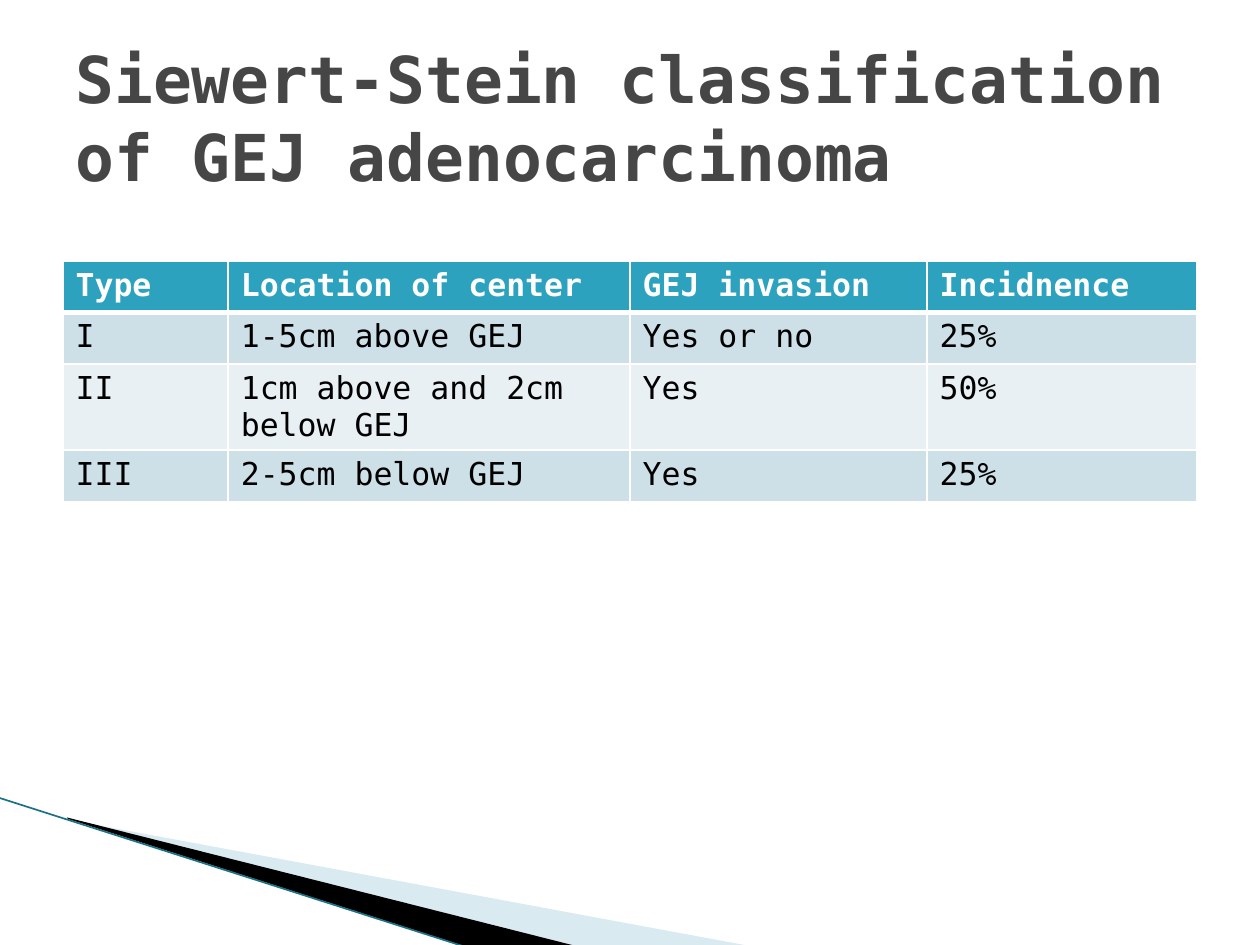
from lxml import etree
from pptx import Presentation
from pptx.dml.color import RGBColor
from pptx.enum.shapes import MSO_CONNECTOR
from pptx.enum.text import MSO_ANCHOR
from pptx.oxml.ns import qn
from pptx.util import Cm, Pt

STRAIGHT = MSO_CONNECTOR.STRAIGHT
MIDDLE = MSO_ANCHOR.MIDDLE
FONT = "DejaVu Sans Mono"

# Content
TITLE = "Siewert-Stein classification of GEJ adenocarcinoma"
CLASSIFICATION = [
    ("Type", "Location of center", "GEJ invasion", "Incidnence"),
    ("I", "1-5cm above GEJ", "Yes or no", "25%"),
    ("II", "1cm above and 2cm below GEJ", "Yes", "50%"),
    ("III", "2-5cm below GEJ", "Yes", "25%"),
]
COLUMN_WIDTHS = (3.33, 8.1, 5.99, 5.44)
ROW_HEIGHT = 1.04
HEADER_FILL = "2DA2BF"
BAND_FILLS = ("CDE0E8", "E8F0F4")

# Corner wedges: corner points in cm, colour, opacity in percent
WEDGES = [
    ([(1.4, 16.53), (15.11, 19.07), (11.58, 19.07), (1.4, 16.51)], "A0CBDC", 40),
    ([(1.35, 16.48), (11.61, 19.07), (9.45, 19.1), (1.37, 16.51)], "000000", 100),
]
EDGE = (-0.03, 16.08, 9.42, 19.1)
EDGE_COLOR = "1B7285"


def rgb(value):
    return RGBColor.from_string(value)


def style_font(font, size, color, bold):
    font.name, font.size, font.bold = FONT, Pt(size), bold
    font.color.rgb = rgb(color)


def add_wedge(slide, corners, color, opacity):
    points = [(round(x * 100), round(y * 100)) for x, y in corners]
    builder = slide.shapes.build_freeform(*points[0], scale=Cm(0.01))
    builder.add_line_segments(points[1:], close=True)
    wedge = builder.convert_to_shape()
    wedge.shadow.inherit = False
    wedge.fill.solid()
    wedge.fill.fore_color.rgb = rgb(color)
    wedge.line.fill.background()
    if opacity < 100:
        tint = wedge.fill._xPr.find(".//" + qn("a:srgbClr"))
        etree.SubElement(tint, qn("a:alpha"), val=str(opacity * 1000))


def set_borders(cell, widths):
    properties = cell._tc.get_or_add_tcPr()
    for position, (side, width) in enumerate(widths.items()):
        border = etree.Element(qn("a:ln" + side), w=str(Pt(width)))
        fill = etree.SubElement(border, qn("a:solidFill"))
        etree.SubElement(fill, qn("a:srgbClr"), val="FFFFFF")
        properties.insert(position, border)


presentation = Presentation()
presentation.slide_width, presentation.slide_height = Cm(25.4), Cm(19.05)
slide = presentation.slides.add_slide(presentation.slide_layouts[6])

# Corner decoration
for wedge in WEDGES:
    add_wedge(slide, *wedge)
edge = slide.shapes.add_connector(STRAIGHT, *(Cm(value) for value in EDGE))
edge.line.color.rgb = rgb(EDGE_COLOR)
edge.line.width = Pt(0.95)
etree.SubElement(edge._element.spPr, qn("a:effectLst"))

# Classification table
classification = slide.shapes.add_table(
    len(CLASSIFICATION), len(COLUMN_WIDTHS), Cm(1.27), Cm(5.26),
    Cm(sum(COLUMN_WIDTHS)), Cm(ROW_HEIGHT * len(CLASSIFICATION))).table
classification.horz_banding = False
for column, width in zip(classification.columns, COLUMN_WIDTHS):
    column.width = Cm(width)
for row_index, texts in enumerate(CLASSIFICATION):
    header = row_index == 0
    classification.rows[row_index].height = Cm(ROW_HEIGHT)
    for column_index, text in enumerate(texts):
        cell = classification.cell(row_index, column_index)
        cell.text = text
        style_font(cell.text_frame.paragraphs[0].runs[0].font, 18,
                   "FFFFFF" if header else "000000", header)
        cell.fill.solid()
        cell.fill.fore_color.rgb = rgb(
            HEADER_FILL if header else BAND_FILLS[(row_index - 1) % 2])
        set_borders(cell, {"L": 1, "R": 1, "T": 3 if row_index == 1 else 1,
                           "B": 3 if header else 1})

# Title
title = slide.shapes.add_textbox(Cm(1.27), Cm(0.76), Cm(22.86), Cm(3.18))
title.text_frame.word_wrap = True
title.text_frame.vertical_anchor = MIDDLE
title.text_frame.text = TITLE
style_font(title.text_frame.paragraphs[0].runs[0].font, 36.9, "464646", True)

presentation.save("out.pptx")
